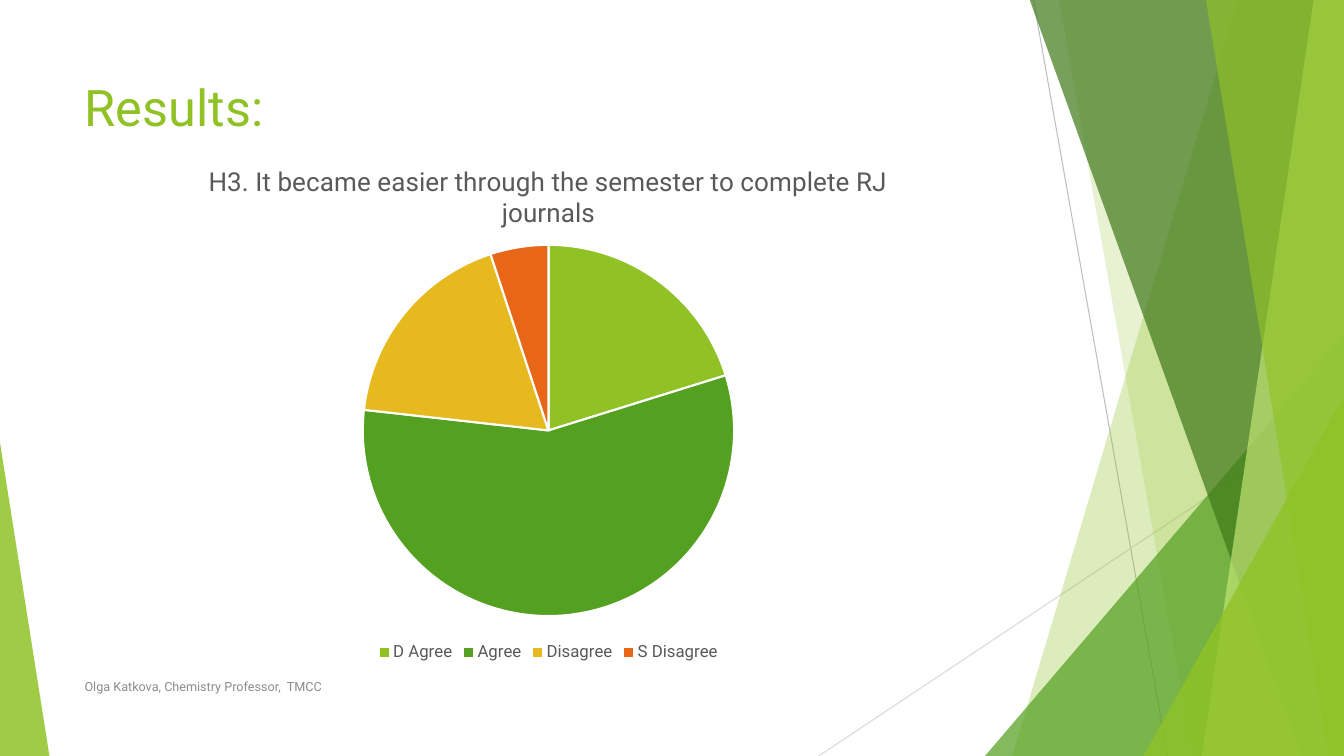
"""Build the results slide with its pie chart and faceted green border."""
import pptx
import pptx.chart.data
import pptx.dml.color
import pptx.enum.chart
import pptx.enum.shapes
import pptx.enum.text
import pptx.oxml
import pptx.util
from pptx.util import Inches

WIDE, HIGH, TOP = 13.33, 7.5, -0.01
FONT = "Roboto"
TITLE = "Results:"
FOOT = "Olga Katkova, Chemistry Professor,  TMCC"
HEAD = "H3. It became easier through the semester to complete RJ journals"
VOTES = [("D Agree", 20, "lime"), ("Agree", 56, "green"),
         ("Disagree", 18, "gold"), ("S Disagree", 5, "orange")]
COLORS = {"lime": "90C226", "green": "54A021", "gold": "E6B91E", "orange": "E76618",
          "dark": "3F7819", "pale": "C0E474", "text": "595959", "foot": "8C8C8C",
          "gray": "BFBFBF", "light": "D9D9D9", "white": "FFFFFF"}
LINES = [(10.25, 0, 11.58, HIGH, "gray"), (WIDE, 4.03, 8.12, HIGH, "light")]
FACETS = [("band", 12.28, 10.04, "lime", 30), ("band", 10.5, 11.83, "lime", 20),
          ("right", 9.77, 3.33, "green", 72), ("band", 10.21, 12.91, "dark", 70),
          ("band", 13.03, 11.92, "pale", 70), ("band", 11.96, 13.18, "lime", 65),
          ("right", 11.34, 3.93, "lime", 80), ("left", 0.49, 4.39, "lime", 85)]
PLOT = {"x": 0.304, "y": 0.193, "w": 0.392, "h": 0.711}
LEFT, SPAN = 0.74, 9.4


def hue(name):
    return pptx.dml.color.RGBColor.from_string(COLORS[name])


def node(xml, tag, **attrs):
    """Append a child element to xml and return it."""
    part = pptx.oxml.xmlchemy.OxmlElement(tag)
    for key, val in attrs.items():
        part.set(key, str(val))
    xml.append(part)
    return part


def style(font, size, color):
    font.name, font.size, font.bold = FONT, pptx.util.Pt(size), False
    font.color.rgb = hue(color)


def write(shape, text, size, color):
    frame = shape.text_frame
    frame.text, frame.word_wrap = text, True
    frame.vertical_anchor = pptx.enum.text.MSO_ANCHOR.MIDDLE
    para = frame.paragraphs[0]
    para.alignment = pptx.enum.text.PP_ALIGN.LEFT
    style(para.runs[0].font, size, color)


def draw_line(shapes, x1, y1, x2, y2, color):
    line = shapes.add_connector(pptx.enum.shapes.MSO_CONNECTOR.STRAIGHT,
                                *map(Inches, (x1, y1, x2, y2)))
    line.line.color.rgb = hue(color)
    line.line.width = pptx.util.Pt(0.75)
    node(line._element.spPr, "a:effectLst")


def draw_facet(shapes, kind, a, b, color, alpha):
    """Draw a band (top x, bottom x) or a corner triangle (inner x, top y)."""
    if kind == "band":
        spots = [(a, TOP), (WIDE, TOP), (WIDE, HIGH), (b, HIGH)]
        points = [(Inches(x), Inches(y)) for x, y in spots]
        path = shapes.build_freeform(*points[0])
        path.add_line_segments(points[1:], close=True)
        shape = path.convert_to_shape()
    else:
        start, end = (a, WIDE) if kind == "right" else (0, a)
        shape = shapes.add_shape(pptx.enum.shapes.MSO_SHAPE.ISOSCELES_TRIANGLE,
                                 *map(Inches, (start, b, end - start, HIGH - b)))
        shape.adjustments[0] = 1 if kind == "right" else 0
    shape.shadow.inherit = False
    shape.line.fill.background()
    shape.fill.solid()
    shape.fill.fore_color.rgb = hue(color)
    clr = shape._element.spPr.find(".//" + pptx.oxml.ns.qn("a:srgbClr"))
    node(clr, "a:alpha", val=alpha * 1000)


def draw_pie(shapes):
    data = pptx.chart.data.CategoryChartData()
    data.categories = [vote[0] for vote in VOTES]
    data.add_series("Series 1", [vote[1] for vote in VOTES])
    chart = shapes.add_chart(pptx.enum.chart.XL_CHART_TYPE.PIE,
                             *map(Inches, (LEFT, 1.43, SPAN, 5.18)), data).chart
    style(chart.font, 10, "text")
    chart.has_title = True
    frame = chart.chart_title.text_frame
    frame.text = HEAD
    style(frame.paragraphs[0].runs[0].font, 18.6, "text")
    chart.chart_title.include_in_layout = False
    chart.has_legend = True
    chart.legend.position = pptx.enum.chart.XL_LEGEND_POSITION.BOTTOM
    chart.legend.include_in_layout = False
    style(chart.legend.font, 12, "text")
    plot = chart.plots[0]
    plot.vary_by_categories = True
    for i, vote in enumerate(VOTES):
        form = plot.series[0].points[i].format
        form.fill.solid()
        form.fill.fore_color.rgb = hue(vote[2])
        form.line.color.rgb = hue("white")
        form.line.width = pptx.util.Pt(1.5)
    area = chart._chartSpace.chart.plotArea
    for old in area.findall(pptx.oxml.ns.qn("c:layout")):
        area.remove(old)
    layout = node(area, "c:layout")
    area.insert(0, layout)
    manual = node(layout, "c:manualLayout")
    node(manual, "c:layoutTarget", val="inner")
    for key in "xy":
        node(manual, f"c:{key}Mode", val="edge")
    for key, val in PLOT.items():
        node(manual, f"c:{key}", val=val)


def main():
    deck = pptx.Presentation()
    deck.slide_width, deck.slide_height = Inches(WIDE), Inches(HIGH)
    slide = deck.slides.add_slide(deck.slide_layouts[5])
    shapes = slide.shapes
    for line in LINES:
        draw_line(shapes, *line)
    for facet in FACETS:
        draw_facet(shapes, *facet)
    title = shapes.title
    title.left, title.top, title.width, title.height = map(Inches, (LEFT, 0.67, SPAN, 0.76))
    write(title, TITLE, 36, "lime")
    draw_pie(shapes)
    foot = shapes.add_textbox(*map(Inches, (LEFT, 6.61, 6.89, 0.4)))
    write(foot, FOOT, 9, "foot")
    deck.save("out.pptx")


if __name__ == "__main__":
    main()
